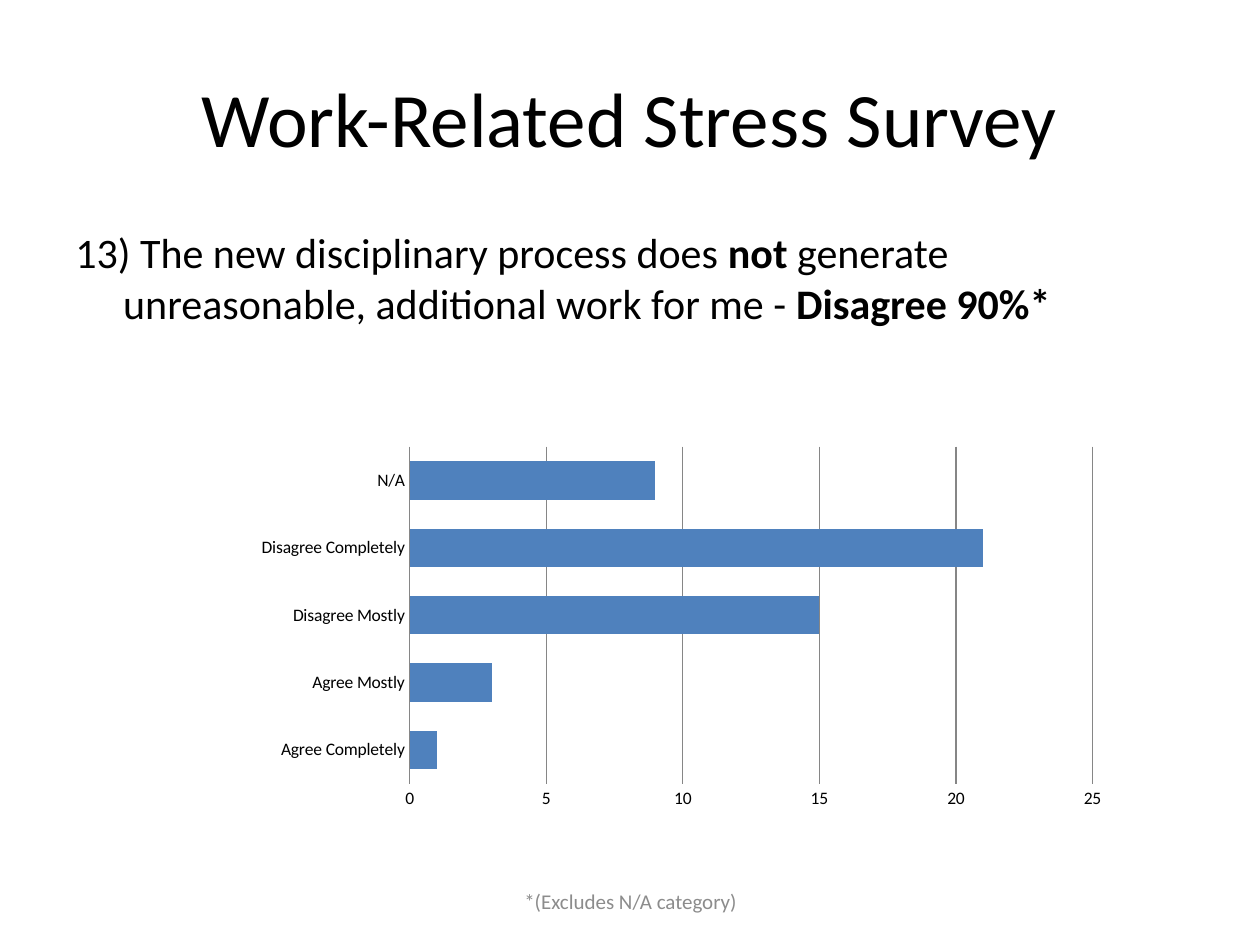
from lxml.etree import SubElement
from pptx import Presentation
from pptx.chart.data import CategoryChartData
from pptx.dml.color import RGBColor
from pptx.enum.chart import XL_CHART_TYPE, XL_TICK_MARK
from pptx.enum.text import MSO_ANCHOR, PP_ALIGN
from pptx.oxml.ns import qn
from pptx.util import Inches, Pt

BLACK = RGBColor(0x00, 0x00, 0x00)
GRAY = RGBColor(0x8C, 0x8C, 0x8C)
GRID_GRAY = RGBColor(0x86, 0x86, 0x86)
BLUE = RGBColor(0x4F, 0x81, 0xBD)

RESPONSES = {
    "Agree Completely": 1,
    "Agree Mostly": 3,
    "Disagree Mostly": 15,
    "Disagree Completely": 21,
    "N/A": 9,
}


class SurveySlide:
    font_name = "Calibri"

    def __init__(self, slide):
        self.slide = slide

    def text(self, box, runs, size, color=BLACK, align=PP_ALIGN.CENTER,
             anchor=MSO_ANCHOR.MIDDLE, hanging=0):
        """Add one paragraph from (wording, bold) runs, with a hanging indent in inches."""
        frame = self.slide.shapes.add_textbox(*map(Inches, box)).text_frame
        frame.word_wrap = True
        frame.vertical_anchor = anchor
        paragraph = frame.paragraphs[0]
        paragraph.alignment = align
        if hanging:
            properties = paragraph._p.get_or_add_pPr()
            properties.set("marL", str(Inches(hanging)))
            properties.set("indent", str(-Inches(hanging)))
        for wording, bold in runs:
            run = paragraph.add_run()
            run.text = wording
            run.font.name = self.font_name
            run.font.size = Pt(size)
            run.font.bold = bold
            run.font.color.rgb = color

    def bar_chart(self, box, values, plot_area):
        data = CategoryChartData()
        data.categories = list(values)
        data.add_series("Series 1", list(values.values()))
        chart = self.slide.shapes.add_chart(
            XL_CHART_TYPE.BAR_CLUSTERED, *map(Inches, box), data).chart
        chart.has_legend = False
        chart.has_title = False
        chart.font.name = self.font_name
        chart.font.size = Pt(10)
        chart.font.color.rgb = BLACK

        plot = chart.plots[0]
        plot.gap_width = 75
        plot.overlap = -25
        plot.vary_by_categories = False
        fill = plot.series[0].format.fill
        fill.solid()
        fill.fore_color.rgb = BLUE

        for axis in (chart.category_axis, chart.value_axis):
            axis.major_tick_mark = XL_TICK_MARK.NONE
            axis.minor_tick_mark = XL_TICK_MARK.NONE
        chart.category_axis.has_major_gridlines = False
        value_axis = chart.value_axis
        value_axis.minimum_scale = 0
        value_axis.maximum_scale = 25
        value_axis.major_unit = 5
        value_axis.has_major_gridlines = True
        value_axis.format.line.fill.background()
        for line in (chart.category_axis.format.line,
                     value_axis.major_gridlines.format.line):
            line.color.rgb = GRID_GRAY
            line.width = Pt(0.75)
        self.place_plot(chart, plot_area)

    @staticmethod
    def place_plot(chart, plot_area):
        """Fix the inner plot area, given as fractions of the chart."""
        area = chart._chartSpace.chart.plotArea
        layout = area.find(qn("c:layout"))
        if layout is None:
            layout = SubElement(area, qn("c:layout"))
            area.insert(0, layout)
        manual = SubElement(layout, qn("c:manualLayout"))
        settings = [("layoutTarget", "inner"), ("xMode", "edge"), ("yMode", "edge"),
                    *zip("xywh", plot_area)]
        for tag, value in settings:
            SubElement(manual, qn(f"c:{tag}")).set("val", str(value))


def main():
    deck = Presentation()
    deck.slide_width, deck.slide_height = Inches(10), Inches(7.5)
    survey = SurveySlide(deck.slides.add_slide(deck.slide_layouts[6]))

    survey.text((0.5, 0.3, 9, 1.25), [("Work-Related Stress Survey", False)], 44)
    question = [
        ("13) The new disciplinary process does ", False),
        ("not", True),
        (" generate unreasonable, additional work for me - ", False),
        ("Disagree 90%*", True),
    ]
    survey.text((0.5, 1.75, 9, 4.95), question, 24, align=PP_ALIGN.LEFT,
                anchor=MSO_ANCHOR.TOP, hanging=0.38)
    survey.bar_chart((1.02, 3.44, 7.97, 3.52), RESPONSES,
                     plot_area=(0.28, 0.03, 0.68, 0.76))
    survey.text((3.42, 6.95, 3.17, 0.4), [("*(Excludes N/A category)", False)], 12, GRAY)

    deck.save("out.pptx")


if __name__ == "__main__":
    main()
